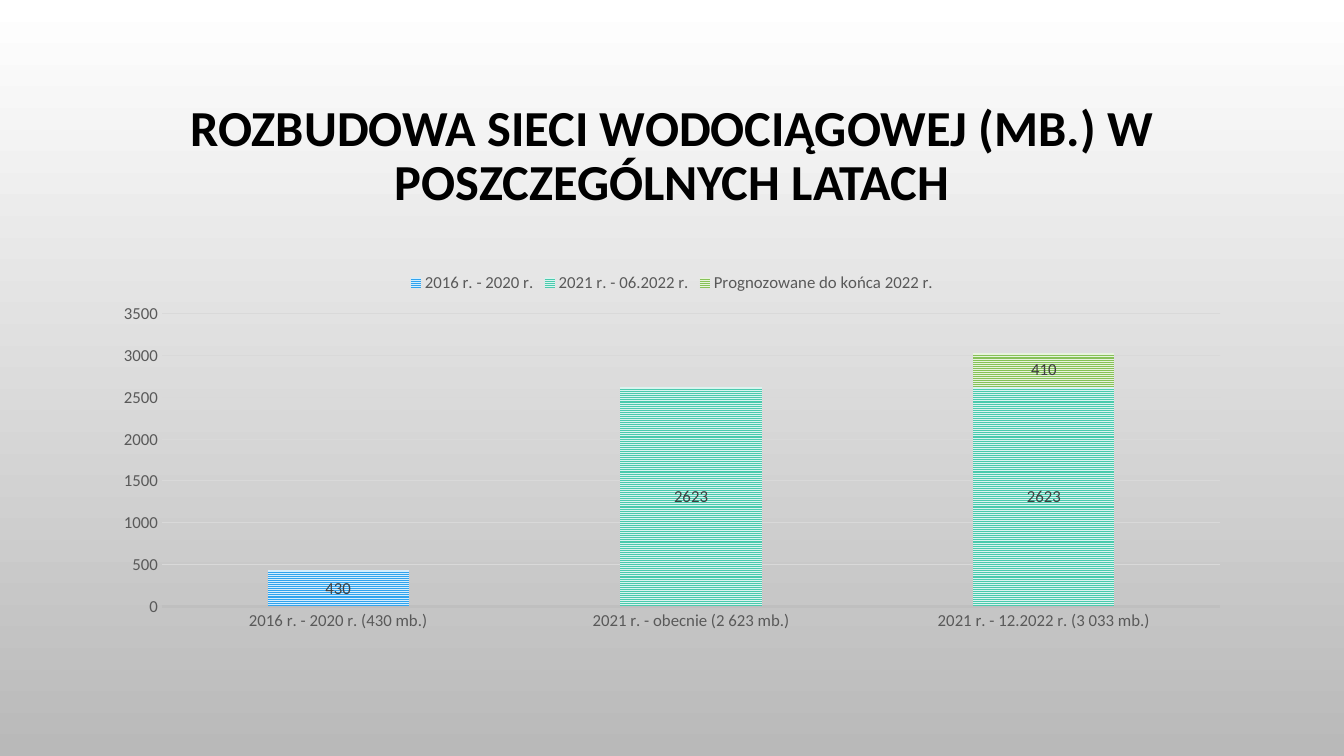
from pptx import Presentation
from pptx.chart.data import CategoryChartData
from pptx.dml.color import RGBColor
from pptx.enum.chart import XL_CHART_TYPE, XL_LABEL_POSITION, XL_LEGEND_POSITION, XL_TICK_MARK
from pptx.enum.dml import MSO_PATTERN
from pptx.enum.text import MSO_ANCHOR, PP_ALIGN
from pptx.util import Emu, Pt

PX_PER_INCH = 100.8
WHITE = RGBColor(0xFF, 0xFF, 0xFF)
BLACK = RGBColor(0x00, 0x00, 0x00)
SILVER = RGBColor(0xB9, 0xB9, 0xB9)
AXIS_LINE = RGBColor(0xBF, 0xBF, 0xBF)
GRID_LINE = RGBColor(0xD9, 0xD9, 0xD9)
AXIS_TEXT = RGBColor(0x59, 0x59, 0x59)
LABEL_TEXT = RGBColor(0x40, 0x40, 0x40)
BLUE, PALE_BLUE = RGBColor(0x2F, 0xA3, 0xEE), RGBColor(0xD5, 0xED, 0xFC)
TEAL, PALE_TEAL = RGBColor(0x4B, 0xCA, 0xAD), RGBColor(0xDB, 0xF4, 0xEF)
GREEN, PALE_GREEN = RGBColor(0x86, 0xC1, 0x57), RGBColor(0xE7, 0xF3, 0xDD)

PERIODS = [
    "2016 r. - 2020 r. (430 mb.)",
    "2021 r. - obecnie (2 623 mb.)",
    "2021 r. - 12.2022 r. (3 033 mb.)",
]
NETWORK_SERIES = [
    ("2016 r. - 2020 r.", (430, None, None), BLUE, PALE_BLUE),
    ("2021 r. - 06.2022 r.", (None, 2623, 2623), TEAL, PALE_TEAL),
    ("Prognozowane do końca 2022 r.", (None, None, 410), GREEN, PALE_GREEN),
]


def px(*lengths):
    """Turn whole pixels into EMU."""
    return [Emu(round(length * 914400 / PX_PER_INCH)) for length in lengths]


class SlideBuilder:
    font_name = "Calibri"

    def __init__(self, presentation):
        self.slide = presentation.slides.add_slide(presentation.slide_layouts[6])

    def style_font(self, font, size, color, bold=False):
        font.name = self.font_name
        font.size = Pt(size)
        font.bold = bold
        font.color.rgb = color

    def add_background(self, top_color, bottom_color):
        fill = self.slide.background.fill
        fill.gradient()
        fill.gradient_angle = 270
        for stop, color in zip(fill.gradient_stops, (top_color, bottom_color)):
            stop.color.rgb = color

    def add_title(self, text, *box):
        frame = self.slide.shapes.add_textbox(*px(*box)).text_frame
        frame.word_wrap = True
        frame.vertical_anchor = MSO_ANCHOR.MIDDLE
        paragraph = frame.paragraphs[0]
        paragraph.alignment = PP_ALIGN.CENTER
        paragraph.line_spacing = 0.9
        run = paragraph.add_run()
        run.text = text
        self.style_font(run.font, 36, BLACK, bold=True)

    def add_stacked_chart(self, categories, series_rows, *box):
        data = CategoryChartData()
        data.categories = categories
        for name, values, _, _ in series_rows:
            data.add_series(name, values)
        chart = self.slide.shapes.add_chart(
            XL_CHART_TYPE.COLUMN_STACKED, *px(*box), data).chart
        self.style_font(chart.font, 10, BLACK)
        chart.has_title = False
        chart.has_legend = True
        chart.legend.position = XL_LEGEND_POSITION.TOP
        chart.legend.include_in_layout = False
        self.style_font(chart.legend.font, 12, AXIS_TEXT)
        self.style_axes(chart)

        plot = chart.plots[0]
        plot.gap_width = 150
        plot.overlap = 100
        plot.vary_by_categories = False
        for series, (_, _, foreground, background) in zip(plot.series, series_rows):
            self.style_series(series, foreground, background)

    def style_axes(self, chart):
        for axis in (chart.category_axis, chart.value_axis):
            axis.major_tick_mark = XL_TICK_MARK.NONE
            axis.minor_tick_mark = XL_TICK_MARK.NONE
            self.style_font(axis.tick_labels.font, 12, AXIS_TEXT)
        category_line = chart.category_axis.format.line
        category_line.color.rgb = AXIS_LINE
        category_line.width = Pt(1.5)

        value_axis = chart.value_axis
        value_axis.minimum_scale = 0
        value_axis.maximum_scale = 3500
        value_axis.major_unit = 500
        value_axis.format.line.fill.background()
        grid_line = value_axis.major_gridlines.format.line
        grid_line.color.rgb = GRID_LINE
        grid_line.width = Pt(0.75)

    def style_series(self, series, foreground, background):
        fill = series.format.fill
        fill.patterned()
        fill.pattern = MSO_PATTERN.NARROW_HORIZONTAL
        fill.fore_color.rgb = foreground
        fill.back_color.rgb = background
        series.format.line.fill.background()
        labels = series.data_labels
        labels.show_value = True
        labels.position = XL_LABEL_POSITION.CENTER
        self.style_font(labels.font, 12, LABEL_TEXT)


def main():
    presentation = Presentation()
    presentation.slide_width, presentation.slide_height = px(1344, 756)
    builder = SlideBuilder(presentation)
    builder.add_background(WHITE, SILVER)
    builder.add_title("ROZBUDOWA SIECI WODOCIĄGOWEJ (MB.) W POSZCZEGÓLNYCH LATACH",
                      101, 69, 1142, 176)
    builder.add_stacked_chart(PERIODS, NETWORK_SERIES, 101, 261, 1142, 377)
    presentation.save("out.pptx")


if __name__ == "__main__":
    main()
